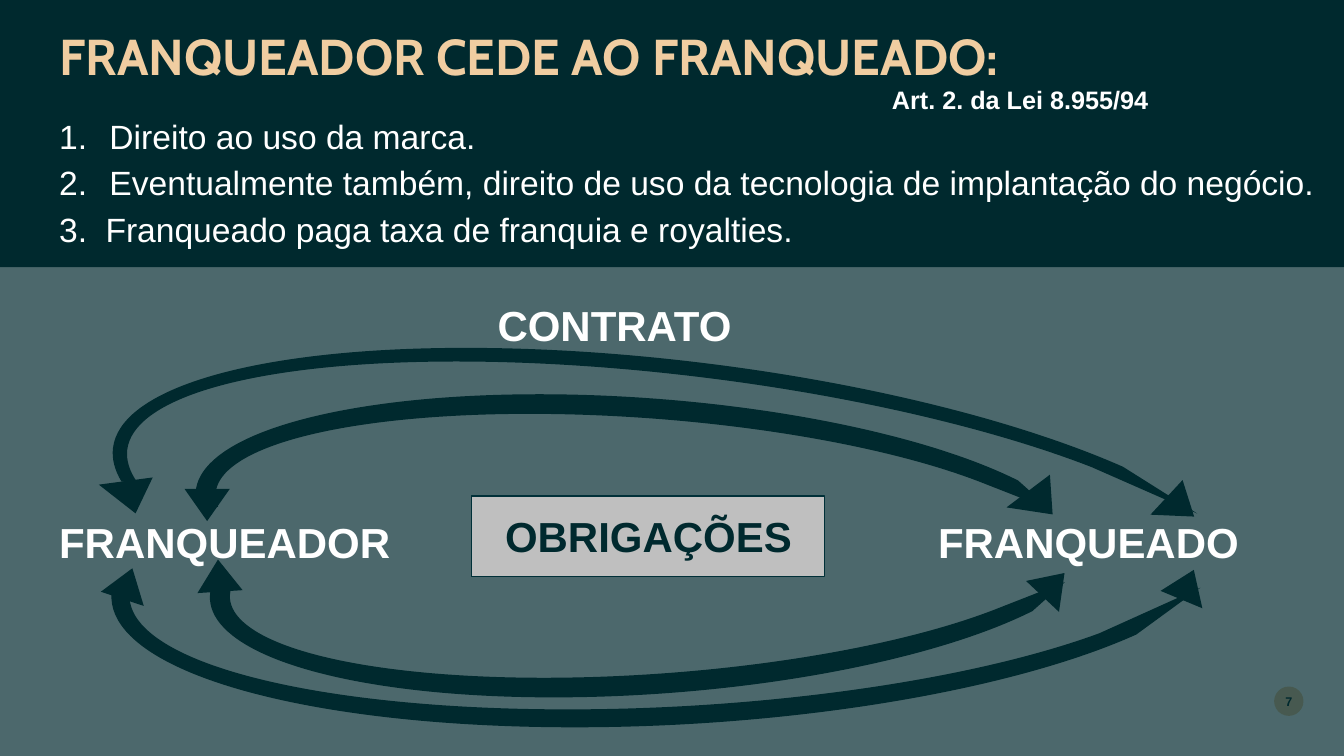
"""Build the slide on what a franchisor grants a franchisee."""

import dataclasses
import typing

import lxml.etree
import pptx
import pptx.dml.color
import pptx.enum.shapes
import pptx.enum.text
import pptx.oxml.ns
import pptx.shapes.autoshape
import pptx.slide
import pptx.text.text
import pptx.util

Kind = pptx.enum.shapes.MSO_SHAPE
Align = pptx.enum.text.PP_ALIGN
Anchor = pptx.enum.text.MSO_ANCHOR
Shape = pptx.shapes.autoshape.Shape
Cm = pptx.util.Cm


@dataclasses.dataclass(frozen=True)
class Theme:
    dark: str = "00292E"
    edge: str = "003038"
    sand: str = "F0CDA1"
    grey: str = "BFBFBF"
    white: str = "FFFFFF"
    head: str = "Cabin"
    body: str = "Arial"
    title: float = 36
    label: float = 30
    item: float = 24
    note: float = 18
    page: float = 9


@dataclasses.dataclass(frozen=True)
class Box:
    left: float
    top: float
    width: float
    height: float


@dataclasses.dataclass(frozen=True)
class Arc:
    box: Box
    turn: float
    flip: bool
    thick: float
    tip: float
    end: float
    start: float
    head: float


@dataclasses.dataclass(frozen=True)
class Point:
    box: Box
    turn: float
    flip: bool = False


class Item(typing.NamedTuple):
    text: str
    width: float
    indent: float


THEME = Theme()
WIDE, HIGH = 33.87, 19.05

ARCS = [
    Arc(Box(2.74, 9.12, 29.03, 7.87), 7, False, 4.6, 6.38, 346.12, 176.7, 2.3),
    Arc(Box(2.79, 10.39, 28.4, 7.87), 356.9, True, 5.9, 6.29, 348.52, 178.97, 2.9),
    Arc(Box(5.26, 11.1, 22.63, 6.38), 355.8, True, 7.9, 4.82, 348.86, 178.17, 4),
    Arc(Box(4.9, 10.03, 22.63, 6.38), 4.2, False, 7.9, 4.82, 348.86, 178.17, 4),
]
POINTS = [
    Point(Box(2.54, 12.12, 1.37, 0.84), 352.4, True),
    Point(Box(29.11, 12.4, 1.19, 0.84), 312.9, True),
    Point(Box(2.64, 14.3, 1.14, 0.81), 18.3),
    Point(Box(29.36, 14.33, 1.14, 0.81), 22.6),
    Point(Box(25.98, 14.33, 1.14, 0.81), 43.2),
    Point(Box(4.95, 14.1, 1.14, 0.81), 356.3),
    Point(Box(4.65, 12.32, 1.14, 0.81), 180),
    Point(Box(25.48, 12.29, 1.37, 0.84), 323, True),
]
ITEMS = [
    Item("Direito ao uso da marca.", 20.12, 1.27),
    Item(
        "Eventualmente também, direito de uso da tecnologia de implantação do negócio.",
        32.61,
        1.27,
    ),
    Item("Franqueado paga taxa de franquia e royalties.", 20.12, 1.17),
]
LABELS = [
    ("CONTRATO", Box(12.29, 7.42, 6.76, 1.55)),
    ("FRANQUEADOR", Box(1.24, 12.9, 8.97, 1.55)),
    ("FRANQUEADO", Box(23.39, 12.9, 8.97, 1.55)),
]


def paint(code: str) -> pptx.dml.color.RGBColor:
    return pptx.dml.color.RGBColor.from_string(code)


def place(box: Box) -> list[pptx.util.Length]:
    return [Cm(size) for size in dataclasses.astuple(box)]


def draw(slide: pptx.slide.Slide, kind: Kind, box: Box, fill: str = THEME.dark,
         turn: float = 0, flip: bool = False) -> Shape:
    shape = slide.shapes.add_shape(kind, *place(box))
    shape.shadow.inherit = False
    shape.fill.solid()
    shape.fill.fore_color.rgb = paint(fill)
    shape.line.fill.background()
    shape.rotation = turn
    if flip:
        shape.element.spPr.xfrm.set("flipV", "1")
    return shape


def fade(shape: Shape, share: int) -> None:
    tone = next(shape.element.spPr.iter(pptx.oxml.ns.qn("a:srgbClr")))
    alpha = lxml.etree.SubElement(tone, pptx.oxml.ns.qn("a:alpha"))
    alpha.set("val", str(share * 1000))


def write(frame: pptx.text.text.TextFrame, text: str, *, size: float,
          color: str = THEME.white, font: str = THEME.body, bold: bool = True,
          align: Align = Align.LEFT) -> pptx.text.text._Paragraph:
    frame.word_wrap = True
    para = frame.paragraphs[0]
    para.alignment = align
    run = para.add_run()
    run.text = text
    run.font.name = font
    run.font.size = pptx.util.Pt(size)
    run.font.bold = bold
    run.font.color.rgb = paint(color)
    return para


def field(slide: pptx.slide.Slide, box: Box) -> pptx.text.text.TextFrame:
    frame = slide.shapes.add_textbox(*place(box)).text_frame
    frame.auto_size = pptx.enum.text.MSO_AUTO_SIZE.SHAPE_TO_FIT_TEXT
    return frame


def count(para: pptx.text.text._Paragraph, start: int, indent: float) -> None:
    props = para._p.get_or_add_pPr()
    props.set("marL", str(Cm(indent)))
    props.set("indent", str(-Cm(indent)))
    mark = lxml.etree.SubElement(props, pptx.oxml.ns.qn("a:buAutoNum"))
    mark.set("type", "arabicPeriod")
    mark.set("startAt", str(start))


def bend(slide: pptx.slide.Slide, arc: Arc) -> None:
    shape = draw(slide, Kind.CIRCULAR_ARROW, arc.box, turn=arc.turn, flip=arc.flip)
    angles = [angle * 0.6 for angle in (arc.tip, arc.end, arc.start)]
    for index, value in enumerate([arc.thick / 100, *angles, arc.head / 100]):
        shape.adjustments[index] = value


def main() -> None:
    deck = pptx.Presentation()
    deck.slide_width, deck.slide_height = Cm(WIDE), Cm(HIGH)
    slide = deck.slides.add_slide(deck.slide_layouts[6])

    badge = draw(slide, Kind.OVAL, Box(32.11, 17.3, 0.74, 0.74), THEME.sand)
    frame = badge.text_frame
    frame.margin_left = frame.margin_right = frame.margin_top = frame.margin_bottom = 0
    frame.vertical_anchor = Anchor.MIDDLE
    write(frame, "7", size=THEME.page, color=THEME.dark, align=Align.CENTER)
    fade(draw(slide, Kind.RECTANGLE, Box(0, 0, WIDE, HIGH)), 70)
    draw(slide, Kind.RECTANGLE, Box(0, 0, WIDE, 6.73))

    frame = slide.shapes.add_textbox(*place(Box(1.24, 0, 28.35, 2.31))).text_frame
    frame.vertical_anchor = Anchor.BOTTOM
    title = write(frame, "FRANQUEADOR CEDE AO FRANQUEADO:", size=THEME.title,
                  color=THEME.sand, font=THEME.head)
    title.line_spacing = 0.9
    write(field(slide, Box(22.23, 2.01, 7.37, 1.02)), "Art. 2. da Lei 8.955/94",
          size=THEME.note)

    for index, item in enumerate(ITEMS):
        frame = field(slide, Box(1.24, 2.79 + 1.17 * index, item.width, 1.27))
        para = write(frame, item.text, size=THEME.item, bold=False)
        count(para, index + 1, item.indent)

    for text, box in LABELS:
        write(field(slide, box), text, size=THEME.label)
    for arc in ARCS:
        bend(slide, arc)
    for point in POINTS:
        shape = draw(slide, Kind.ISOSCELES_TRIANGLE, point.box, turn=point.turn,
                     flip=point.flip)
        shape.adjustments[0] = 0.6 if point.flip else 0.5

    plate = draw(slide, Kind.ACTION_BUTTON_CUSTOM, Box(11.89, 12.5, 8.89, 2.03), THEME.grey)
    plate.line.color.rgb = paint(THEME.edge)
    plate.line.width = pptx.util.Pt(1)
    write(field(slide, Box(11.86, 12.75, 8.97, 1.55)), "OBRIGAÇÕES", size=THEME.label,
          color=THEME.dark, align=Align.CENTER)
    deck.save("out.pptx")


if __name__ == "__main__":
    main()
